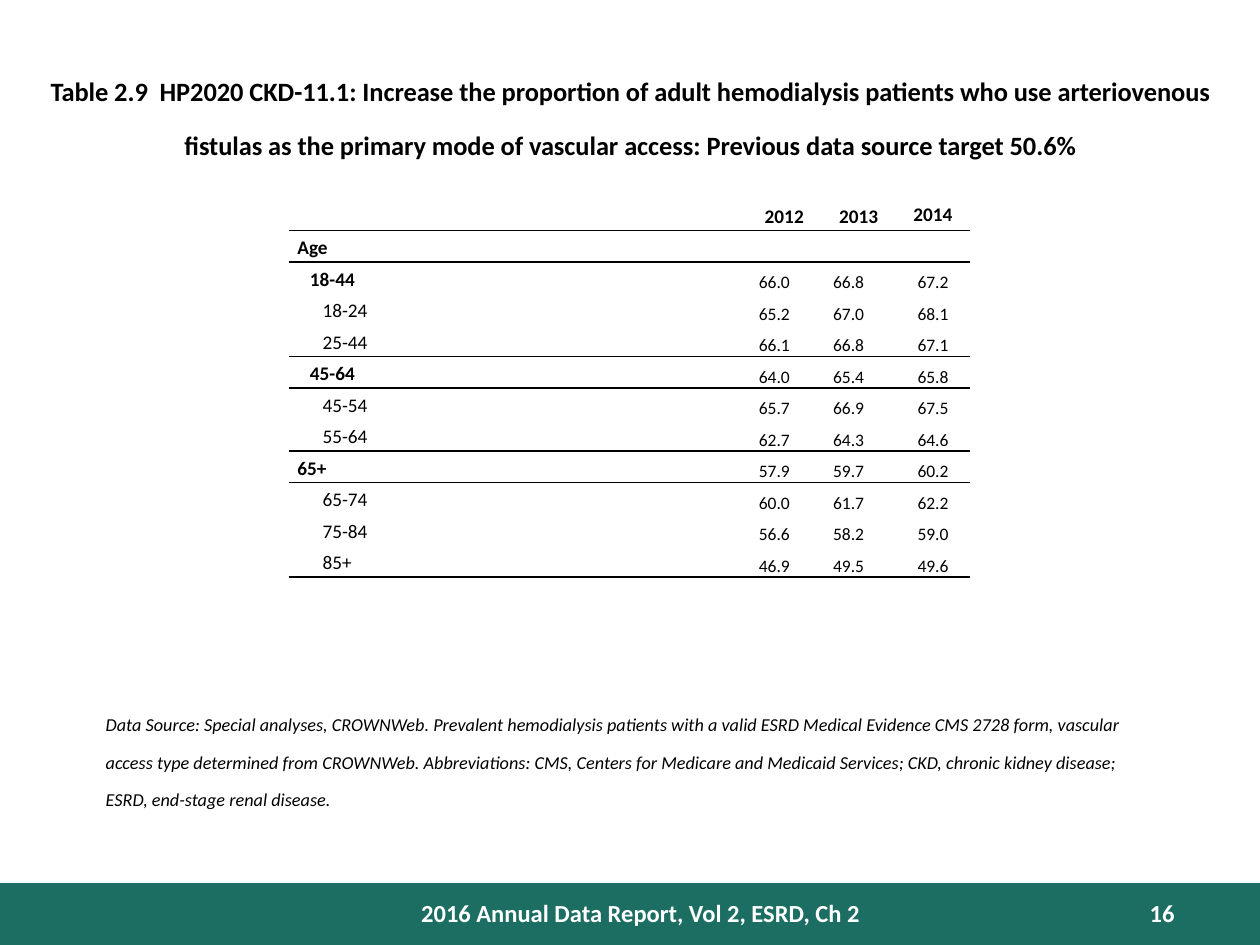
from lxml import etree
from pptx import Presentation
from pptx.dml.color import RGBColor
from pptx.enum.shapes import MSO_SHAPE
from pptx.enum.text import MSO_ANCHOR, PP_ALIGN
from pptx.oxml import parse_xml
from pptx.oxml.ns import nsdecls
from pptx.util import Inches, Pt

COLORS = {"ink": "000000", "band": "1C6E62", "paper": "FFFFFF"}
FONT = "Calibri"
NO_GRID_STYLE = "{2D5ABB26-0587-4C30-8999-92F81FD0307C}"

TITLE = ("Table 2.9  HP2020 CKD-11.1: Increase the proportion of adult hemodialysis "
         "patients who use arteriovenous fistulas as the primary mode of vascular "
         "access: Previous data source target 50.6%")
SOURCE = ("Data Source: Special analyses, CROWNWeb. Prevalent hemodialysis patients with "
          "a valid ESRD Medical Evidence CMS 2728 form, vascular access type determined "
          "from CROWNWeb. Abbreviations: CMS, Centers for Medicare and Medicaid Services; "
          "CKD, chronic kidney disease; ESRD, end-stage renal disease.")

YEARS = ["2012", "2013", "2014"]
# Label, indent level, values
AGE_ROWS = [
    ("Age", 0, ["", "", ""]),
    ("18-44", 1, ["66.0", "66.8", "67.2"]),
    ("18-24", 2, ["65.2", "67.0", "68.1"]),
    ("25-44", 2, ["66.1", "66.8", "67.1"]),
    ("45-64", 1, ["64.0", "65.4", "65.8"]),
    ("45-54", 2, ["65.7", "66.9", "67.5"]),
    ("55-64", 2, ["62.7", "64.3", "64.6"]),
    ("65+", 0, ["57.9", "59.7", "60.2"]),
    ("65-74", 2, ["60.0", "61.7", "62.2"]),
    ("75-84", 2, ["56.6", "58.2", "59.0"]),
    ("85+", 2, ["46.9", "49.5", "49.6"]),
]
RULED_ROWS = {0, 4, 7, 11}  # table rows with a line below


def write(tf, text, size, color="ink", align=PP_ALIGN.LEFT, bold=False, italic=False):
    p = tf.paragraphs[0]
    p.text = text
    p.alignment = align
    for r in p.runs:
        r.font.name = FONT
        r.font.size = Pt(size)
        r.font.bold = bold
        r.font.italic = italic
        r.font.color.rgb = RGBColor.from_string(COLORS[color])
    return p


def add_text(s, left, top, width, height, text, size, raised=False, **style):
    box = s.shapes.add_textbox(Inches(left), Inches(top), Inches(width), Inches(height))
    box.text_frame.word_wrap = True
    p = write(box.text_frame, text, size, **style)
    if raised:
        p.runs[0].font._element.set("baseline", "30000")


def add_footer(s, left, top, width, height):
    band = s.shapes.add_shape(MSO_SHAPE.RECTANGLE, Inches(left), Inches(top),
                              Inches(width), Inches(height))
    band.shadow.inherit = False
    band.fill.solid()
    band.fill.fore_color.rgb = RGBColor.from_string(COLORS["band"])
    band.line.fill.background()
    add_text(s, left + 3.17, top + 0.07, 3.83, 0.33,
             "2016 Annual Data Report, Vol 2, ESRD, Ch 2", 14,
             color="paper", align=PP_ALIGN.CENTER, bold=True)
    add_text(s, left + 8.42, top + 0.07, 1, 0.3, "16", 14,
             color="paper", align=PP_ALIGN.RIGHT, bold=True)


def add_rule(cell, side):
    cell._tc.get_or_add_tcPr().append(parse_xml(
        f'<a:{side} {nsdecls("a")} w="12700"><a:solidFill>'
        f'<a:srgbClr val="{COLORS["ink"]}"/></a:solidFill></a:{side}>'))


def set_margins(cell, left, top, right, bottom):
    cell.margin_left, cell.margin_top = Inches(left), Inches(top)
    cell.margin_right, cell.margin_bottom = Inches(right), Inches(bottom)


def fill_label(cell, text, level):
    p = write(cell.text_frame, text, 11, bold=level < 2)
    p.line_spacing = 1.15
    if level:
        pPr = p._p.get_or_add_pPr()
        pPr.set("marL", str(Inches(0.1)))
        pPr.set("indent", str(Inches(0.1) * (level - 1)))
    cell.vertical_anchor = MSO_ANCHOR.MIDDLE


def fill_number(cell, text, is_header, is_last):
    p = write(cell.text_frame, text, 11 if is_header else 10,
              align=PP_ALIGN.CENTER, bold=is_header)
    p.line_spacing = 1.15
    p.space_after = Pt(10)
    if is_header:
        cell.vertical_anchor = MSO_ANCHOR.TOP if is_last else MSO_ANCHOR.MIDDLE
    else:
        cell.vertical_anchor = MSO_ANCHOR.BOTTOM
        if not is_last:
            set_margins(cell, 0, 0.03, 0.16, 0)


def add_age_table(s, left, top, width, height):
    rows = [("", 0, YEARS)] + AGE_ROWS
    frame = s.shapes.add_table(len(rows), 4, Inches(left), Inches(top),
                               Inches(width), Inches(height))
    table = frame.table
    table.first_row = table.horz_banding = False
    table._tbl.tblPr.find("{*}tableStyleId").text = NO_GRID_STYLE
    year_width = 0.59
    for i, column in enumerate(table.columns):
        column.width = Inches(year_width if i else width - 3 * year_width)
    for row in table.rows:
        row.height = Inches(height / len(rows))

    for i, (label, level, values) in enumerate(rows):
        for j, text in enumerate([label] + values):
            cell = table.cell(i, j)
            set_margins(cell, 0.07, 0, 0.07, 0)
            if not text:  # small end mark keeps an empty row low
                end = etree.SubElement(cell.text_frame.paragraphs[0]._p,
                                       "{http://schemas.openxmlformats.org/drawingml/2006/main}endParaRPr")
                end.set("sz", "1000")
            elif j == 0:
                fill_label(cell, text, level)
            else:
                fill_number(cell, text, i == 0, j == len(values))
            if i - 1 in RULED_ROWS:
                add_rule(cell, "lnT")
            if i in RULED_ROWS:
                add_rule(cell, "lnB")
            cell.fill.background()


def main():
    prs = Presentation()
    prs.slide_width, prs.slide_height = Inches(10), Inches(7.5)
    s = prs.slides.add_slide(prs.slide_layouts[6])
    add_footer(s, 0, 7.01, 10, 0.5)
    add_text(s, 0.74, 5.58, 8.51, 0.71, SOURCE, 18, raised=True, italic=True)
    add_text(s, 0, 0.5, 10, 0.68, TITLE, 26, raised=True,
             align=PP_ALIGN.CENTER, bold=True)
    add_age_table(s, 2.29, 1.58, 5.41, 3)
    prs.save("out.pptx")


if __name__ == "__main__":
    main()
